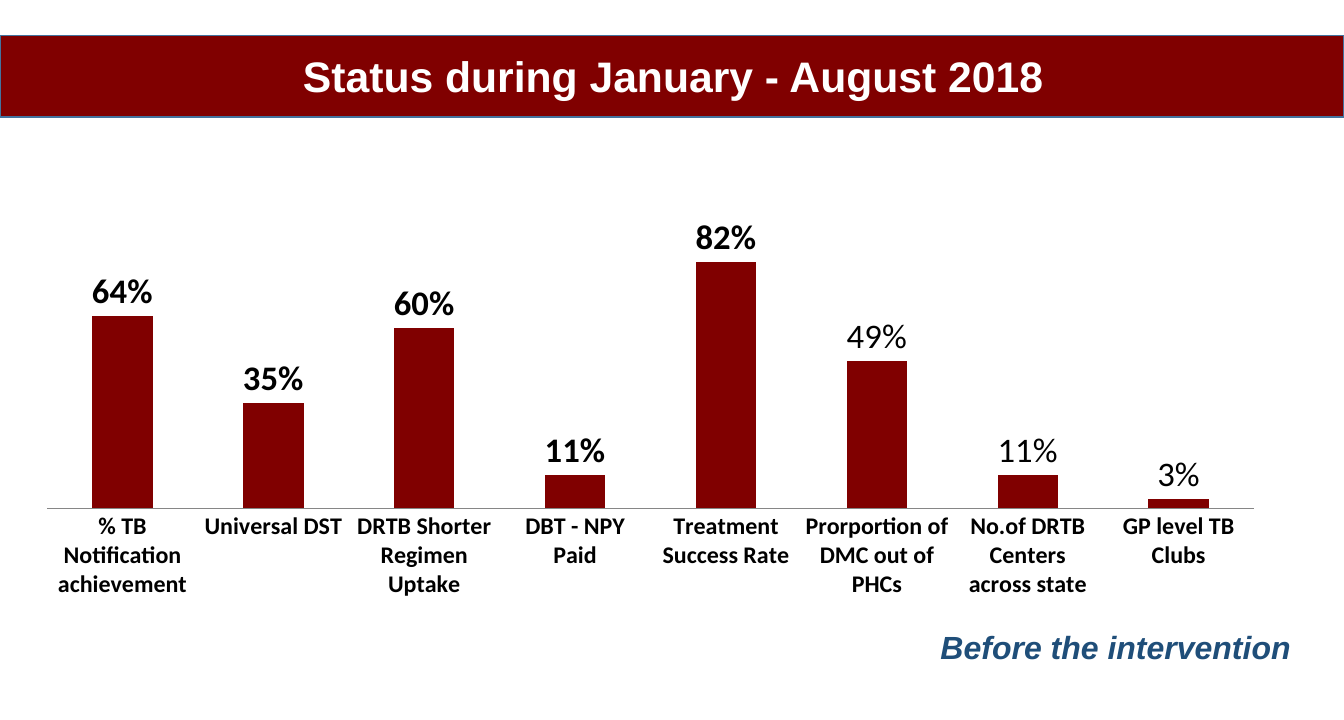
from lxml import etree
from pptx import Presentation
from pptx.chart.data import CategoryChartData
from pptx.dml.color import RGBColor
from pptx.enum.chart import XL_CHART_TYPE, XL_LABEL_POSITION, XL_TICK_LABEL_POSITION, XL_TICK_MARK
from pptx.enum.shapes import MSO_SHAPE
from pptx.enum.text import MSO_ANCHOR, PP_ALIGN
from pptx.oxml.ns import qn
from pptx.util import Cm, Pt

COLUMNS = XL_CHART_TYPE.COLUMN_CLUSTERED
OUTSIDE_END = XL_LABEL_POSITION.OUTSIDE_END
NO_LABELS = XL_TICK_LABEL_POSITION.NONE
NO_TICKS = XL_TICK_MARK.NONE
RECTANGLE = MSO_SHAPE.RECTANGLE
MIDDLE = MSO_ANCHOR.MIDDLE
CENTER, RIGHT = PP_ALIGN.CENTER, PP_ALIGN.RIGHT

COLORS = {"maroon": "800000", "border": "43739E", "white": "FFFFFF",
          "black": "000000", "note": "1F4E79", "axis": "868686"}
PERCENT = '0"%"'
INDICATORS = [
    ("% TB Notification achievement", 64),
    ("Universal DST", 35),
    ("DRTB Shorter Regimen Uptake", 60),
    ("DBT - NPY Paid", 11),
    ("Treatment Success Rate", 82),
    ("Prorportion of DMC out of PHCs", 49),
    ("No.of DRTB Centers across state", 11),
    ("GP level TB Clubs", 3),
]
PLAIN_LABELS = (5, 6, 7)


def rgb(name):
    return RGBColor.from_string(COLORS[name])


class SlideBuilder:
    text_font = "Arial"
    chart_font = "Calibri"

    def __init__(self, slide):
        self.slide = slide
        self.shapes = slide.shapes

    def set_font(self, font, name, size, color, bold=False, italic=False):
        font.name, font.size = name, Pt(size)
        font.bold, font.italic = bold, italic
        font.color.rgb = rgb(color)

    def set_text(self, sp, text, size, color, align, italic=False):
        tf = sp.text_frame
        tf.word_wrap = True
        tf.vertical_anchor = MIDDLE
        p = tf.paragraphs[0]
        p.text, p.alignment = text, align
        self.set_font(p.font, self.text_font, size, color, True, italic)

    def banner(self, x, y, w, h):
        sp = self.shapes.add_shape(RECTANGLE, Cm(x), Cm(y), Cm(w), Cm(h))
        sp.shadow.inherit = False
        sp.fill.solid()
        sp.fill.fore_color.rgb = rgb("maroon")
        sp.line.color.rgb = rgb("border")
        sp.line.width = Pt(1)

    def title(self, text, x, y, w, h):
        sp = self.shapes.title
        sp.left, sp.top, sp.width, sp.height = Cm(x), Cm(y), Cm(w), Cm(h)
        self.set_text(sp, text, 32, "white", CENTER)
        # Bring the title in front of the banner
        sp.element.getparent().append(sp.element)

    def note(self, text, x, y, w, h):
        sp = self.shapes.add_textbox(Cm(x), Cm(y), Cm(w), Cm(h))
        self.set_text(sp, text, 24, "note", RIGHT, italic=True)

    def column_chart(self, rows, x, y, w, h):
        data = CategoryChartData(number_format=PERCENT)
        data.categories = [name for name, _ in rows]
        data.add_series("Series 1", [value for _, value in rows])
        chart = self.shapes.add_chart(COLUMNS, Cm(x), Cm(y), Cm(w), Cm(h), data).chart
        chart.has_legend = chart.has_title = False
        self.set_font(chart.font, self.chart_font, 18, "black")
        self.format_axes(chart)
        self.format_columns(chart.plots[0])
        self.place_plot(chart, x=0.02, y=0.05, w=0.96, h=0.7)

    def format_axes(self, chart):
        axis = chart.category_axis
        axis.major_tick_mark = NO_TICKS
        axis.format.line.color.rgb = rgb("axis")
        self.set_font(axis.tick_labels.font, self.chart_font, 18, "black", True)
        axis = chart.value_axis
        axis.minimum_scale, axis.maximum_scale = 0, 90
        axis.has_major_gridlines = False
        axis.tick_label_position = NO_LABELS
        axis.visible = False

    def format_columns(self, plot):
        plot.vary_by_categories = False
        plot.gap_width, plot.overlap = 150, -25
        series = plot.series[0]
        series.format.fill.solid()
        series.format.fill.fore_color.rgb = rgb("maroon")
        labels = series.data_labels
        labels.show_value = True
        labels.number_format, labels.number_format_is_linked = PERCENT, False
        labels.position = OUTSIDE_END
        self.set_font(labels.font, self.chart_font, 26, "black", True)
        for i in PLAIN_LABELS:
            label = series.points[i].data_label
            self.set_font(label.font, self.chart_font, 26, "black")
            label.position = OUTSIDE_END

    def place_plot(self, chart, **box):
        area = chart.element.find(".//" + qn("c:plotArea"))
        layout = area.find(qn("c:layout"))
        if layout is None:
            layout = etree.Element(qn("c:layout"))
            area.insert(0, layout)
        manual = etree.SubElement(layout, qn("c:manualLayout"))
        settings = {"layoutTarget": "inner", "xMode": "edge", "yMode": "edge", **box}
        for tag, value in settings.items():
            etree.SubElement(manual, qn("c:" + tag)).set("val", str(value))


def main():
    prs = Presentation()
    prs.slide_width, prs.slide_height = Cm(35.56), Cm(19.05)
    s = SlideBuilder(prs.slides.add_slide(prs.slide_layouts[5]))

    # Heading
    s.banner(0, 0.94, 35.56, 2.16)
    s.title("Status during January - August 2018", 0.69, 1.17, 34.27, 1.63)

    # Indicators
    s.column_chart(INDICATORS, 0.58, 5.74, 33.27, 10.26)

    # Closing remark
    s.note("Before the intervention", 4.55, 16.48, 29.85, 1.27)

    prs.save("out.pptx")


if __name__ == "__main__":
    main()
